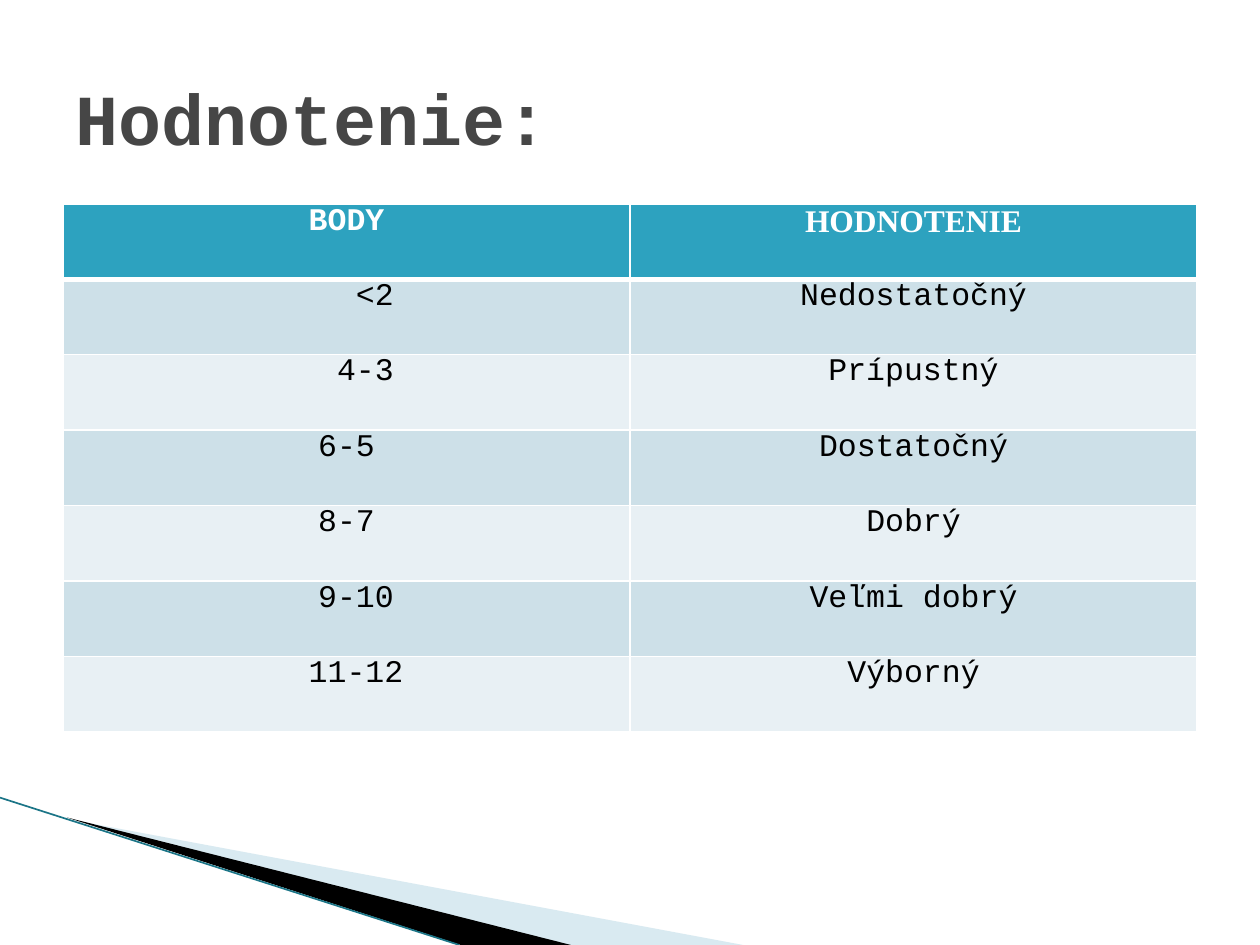
"""Build the grading scale slide with its title, table and corner ornament."""
from dataclasses import dataclass

from lxml.etree import SubElement
from pptx import Presentation
from pptx.dml.color import RGBColor
from pptx.enum.shapes import MSO_CONNECTOR as Connector
from pptx.enum.text import MSO_ANCHOR as Anchor, PP_ALIGN as Align
from pptx.oxml.ns import qn
from pptx.util import Cm, Pt

COLORS = {
    "header": "2DA2BF", "odd": "CDE0E8", "even": "E8F0F4", "border": "FFFFFF",
    "title": "464646", "header_text": "FFFFFF", "text": "000000",
    "pale_wedge": "A0CBDC", "dark_wedge": "000000", "edge": "1B7587",
}
MONO, SERIF = "Courier New", "Times New Roman"
CHAR_WIDTH = 0.38
CELL_MARGIN = 0.18
ROW_HEIGHT = 1.52


@dataclass
class Grade:
    points: str
    rating: str
    indent_chars: int = 0


@dataclass
class Wedge:
    color: str
    corners: list[tuple[float, float]]
    opacity: int = 100


GRADES = [
    Grade("<2", "Nedostatočný", 3),
    Grade("4-3", "Prípustný", 2),
    Grade("6-5", "Dostatočný"),
    Grade("8-7", "Dobrý"),
    Grade("9-10", "Veľmi dobrý", 1),
    Grade("11-12", "Výborný", 1),
]
WEDGES = [
    Wedge("pale_wedge", [(1.4, 16.52), (14.98, 19.05), (11.48, 19.05)], 40),
    Wedge("dark_wedge", [(1.35, 16.48), (11.51, 19.05), (9.29, 19.05)]),
]


def rgb(name: str) -> RGBColor:
    return RGBColor.from_string(COLORS[name])


def format_run(run, font: str, size: float, color: str, bold: bool) -> None:
    run.font.name, run.font.size, run.font.bold = font, Pt(size), bold
    run.font.color.rgb = rgb(color)


def draw_wedge(slide, wedge: Wedge) -> None:
    start, *others = [(Cm(x), Cm(y)) for x, y in wedge.corners]
    builder = slide.shapes.build_freeform(*start)
    builder.add_line_segments(others, close=True)
    shape = builder.convert_to_shape()
    shape.shadow.inherit = False
    shape.line.fill.background()
    shape.fill.solid()
    shape.fill.fore_color.rgb = rgb(wedge.color)
    if wedge.opacity < 100:
        color = shape._element.spPr.find(f"{qn('a:solidFill')}/{qn('a:srgbClr')}")
        SubElement(color, qn("a:alpha"), val=str(wedge.opacity * 1000))


def draw_edge(slide) -> None:
    edge = slide.shapes.add_connector(Connector.STRAIGHT, 0, Cm(16.08), Cm(9.26), Cm(19.05))
    edge.line.color.rgb = rgb("edge")
    edge.line.width = Pt(0.95)
    SubElement(edge._element.spPr, qn("a:effectLst"))


def add_borders(cell, top: float, bottom: float) -> None:
    properties = cell._tc.get_or_add_tcPr()
    for side, width in {"L": 1, "R": 1, "T": top, "B": bottom}.items():
        border = SubElement(properties, qn(f"a:ln{side}"), w=str(Pt(width)))
        fill = SubElement(border, qn("a:solidFill"))
        SubElement(fill, qn("a:srgbClr"), val=COLORS["border"])


def fill_cell(cell, text: str, row: int, font: str, indent_chars: int = 0) -> None:
    is_header = row == 0
    add_borders(cell, top=3 if row == 1 else 1, bottom=3 if is_header else 1)
    cell.fill.solid()
    cell.fill.fore_color.rgb = rgb("header" if is_header else "odd" if row % 2 else "even")
    cell.margin_left = Cm(CELL_MARGIN + indent_chars * CHAR_WIDTH)
    cell.margin_right = Cm(CELL_MARGIN)
    cell.margin_top = cell.margin_bottom = 0
    paragraph = cell.text_frame.paragraphs[0]
    paragraph.text = text
    paragraph.alignment = Align.CENTER
    format_run(paragraph.runs[0], font, 18, "header_text" if is_header else "text", is_header)


def draw_grades(slide) -> None:
    rows = [Grade("BODY", "HODNOTENIE"), *GRADES]
    table = slide.shapes.add_table(
        len(rows), 2, Cm(1.27), Cm(4.11), Cm(22.86), Cm(ROW_HEIGHT * len(rows))
    ).table
    for index, grade in enumerate(rows):
        table.rows[index].height = Cm(ROW_HEIGHT)
        fill_cell(table.cell(index, 0), grade.points, index, MONO, grade.indent_chars)
        fill_cell(table.cell(index, 1), grade.rating, index, MONO if index else SERIF)


def write_title(slide) -> None:
    title = slide.shapes.title
    title.left, title.top, title.width, title.height = Cm(1.27), Cm(0.76), Cm(22.86), Cm(3.18)
    title.text_frame.text = "Hodnotenie:"
    title.text_frame.vertical_anchor = Anchor.MIDDLE
    heading = title.text_frame.paragraphs[0]
    heading.alignment = Align.LEFT
    format_run(heading.runs[0], MONO, 41, "title", True)


def main() -> None:
    deck = Presentation()
    deck.slide_width, deck.slide_height = Cm(25.4), Cm(19.05)
    slide = deck.slides.add_slide(deck.slide_layouts[5])
    for wedge in WEDGES:
        draw_wedge(slide, wedge)
    draw_edge(slide)
    draw_grades(slide)
    write_title(slide)
    deck.save("out.pptx")


if __name__ == "__main__":
    main()
